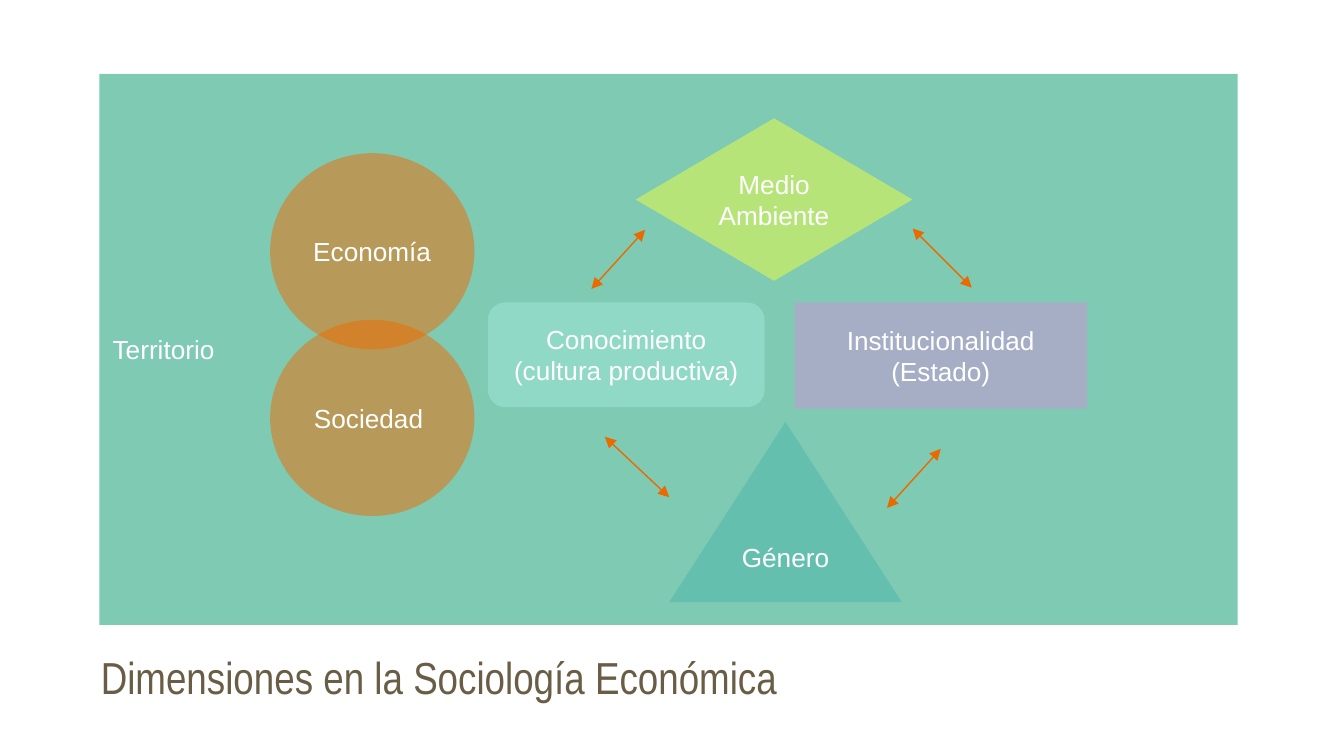
from typing import NamedTuple

from lxml.etree import SubElement
from pptx import Presentation
from pptx.dml.color import RGBColor
from pptx.enum.shapes import MSO_CONNECTOR, MSO_SHAPE
from pptx.enum.text import MSO_ANCHOR, MSO_AUTO_SIZE, PP_ALIGN
from pptx.oxml.ns import qn
from pptx.util import Inches, Pt

COLORS = {
    "territory": "009668",
    "circle": "EF6C00",
    "institutions": "CE93D8",
    "environment": "EEFF41",
    "gender": "4DB6AC",
    "knowledge": "A1E8D9",
    "arrow": "EA6A00",
    "label": "FFFFFF",
    "title": "695D46",
}


class Dimension(NamedTuple):
    label: str
    outline: MSO_SHAPE
    color: str
    left: float
    top: float
    width: float
    height: float
    align: PP_ALIGN = PP_ALIGN.CENTER


class Relation(NamedTuple):
    x1: float
    y1: float
    x2: float
    y2: float


DIMENSIONS = [
    Dimension("Territorio", MSO_SHAPE.RECTANGLE, "territory", 0.74, 0.55, 8.47, 4.1, PP_ALIGN.LEFT),
    Dimension("Economía", MSO_SHAPE.FLOWCHART_CONNECTOR, "circle", 2.01, 1.14, 1.52, 1.46),
    Dimension("Sociedad ", MSO_SHAPE.FLOWCHART_CONNECTOR, "circle", 2.01, 2.38, 1.52, 1.46),
    Dimension("Institucionalidad (Estado)", MSO_SHAPE.RECTANGLE, "institutions", 5.91, 2.25, 2.18, 0.79),
    Dimension("Medio Ambiente", MSO_SHAPE.DIAMOND, "environment", 4.73, 0.88, 2.06, 1.21),
    Dimension("Género", MSO_SHAPE.ISOSCELES_TRIANGLE, "gender", 4.98, 3.14, 1.73, 1.34),
    Dimension("Conocimiento (cultura productiva)", MSO_SHAPE.ROUNDED_RECTANGLE, "knowledge", 3.63, 2.25, 2.06, 0.78),
]

RELATIONS = [
    Relation(4.4, 2.15, 4.8, 1.71),
    Relation(4.98, 3.7, 4.5, 3.25),
    Relation(7.23, 2.14, 6.79, 1.7),
    Relation(6.6, 3.78, 7, 3.34),
]


def write(frame, text: str, *, size: float, color: str, font: str = "Arial",
          align: PP_ALIGN = PP_ALIGN.CENTER, left_inset: float = 0.1) -> None:
    frame.word_wrap = True
    frame.auto_size = MSO_AUTO_SIZE.NONE
    frame.vertical_anchor = MSO_ANCHOR.MIDDLE
    frame.margin_left = Inches(left_inset)
    frame.margin_right = frame.margin_top = frame.margin_bottom = Inches(0.1)
    paragraph = frame.paragraphs[0]
    paragraph.alignment = align
    run = paragraph.add_run()
    run.text = text
    run.font.name = font
    run.font.size = Pt(size)
    run.font.color.rgb = RGBColor.from_string(COLORS[color])


def draw_dimension(slide, item: Dimension) -> None:
    figure = slide.shapes.add_shape(
        item.outline, *map(Inches, (item.left, item.top, item.width, item.height)))
    figure.shadow.inherit = False
    figure.line.fill.background()
    figure.fill.solid()
    figure.fill.fore_color.rgb = RGBColor.from_string(COLORS[item.color])
    tint = figure.fill._xPr.find(f"{qn('a:solidFill')}/{qn('a:srgbClr')}")
    SubElement(tint, qn("a:alpha"), val="50000")
    write(figure.text_frame, item.label, size=14, color="label", align=item.align)


def draw_relation(slide, relation: Relation) -> None:
    arrow = slide.shapes.add_connector(MSO_CONNECTOR.STRAIGHT, *map(Inches, relation))
    arrow.line.color.rgb = RGBColor.from_string(COLORS["arrow"])
    arrow.line.width = Pt(0.75)
    stroke = arrow.line._get_or_add_ln()
    for end in ("a:headEnd", "a:tailEnd"):
        SubElement(stroke, qn(end), type="triangle", w="med", len="med")
    SubElement(arrow._element.spPr, qn("a:effectLst"))


def main() -> None:
    deck = Presentation()
    deck.slide_width, deck.slide_height = Inches(10), Inches(10 * 9 / 16)
    slide = deck.slides.add_slide(deck.slide_layouts[5])

    title = slide.shapes.title
    title.left, title.top, title.width, title.height = map(Inches, (0.4, 4.71, 7.07, 0.65))
    write(title.text_frame, "Dimensiones en la Sociología Económica", size=24, color="title",
          font="Arial Narrow", align=PP_ALIGN.LEFT, left_inset=0.35)

    for item in DIMENSIONS:
        draw_dimension(slide, item)
    for relation in RELATIONS:
        draw_relation(slide, relation)

    deck.save("out.pptx")


if __name__ == "__main__":
    main()
